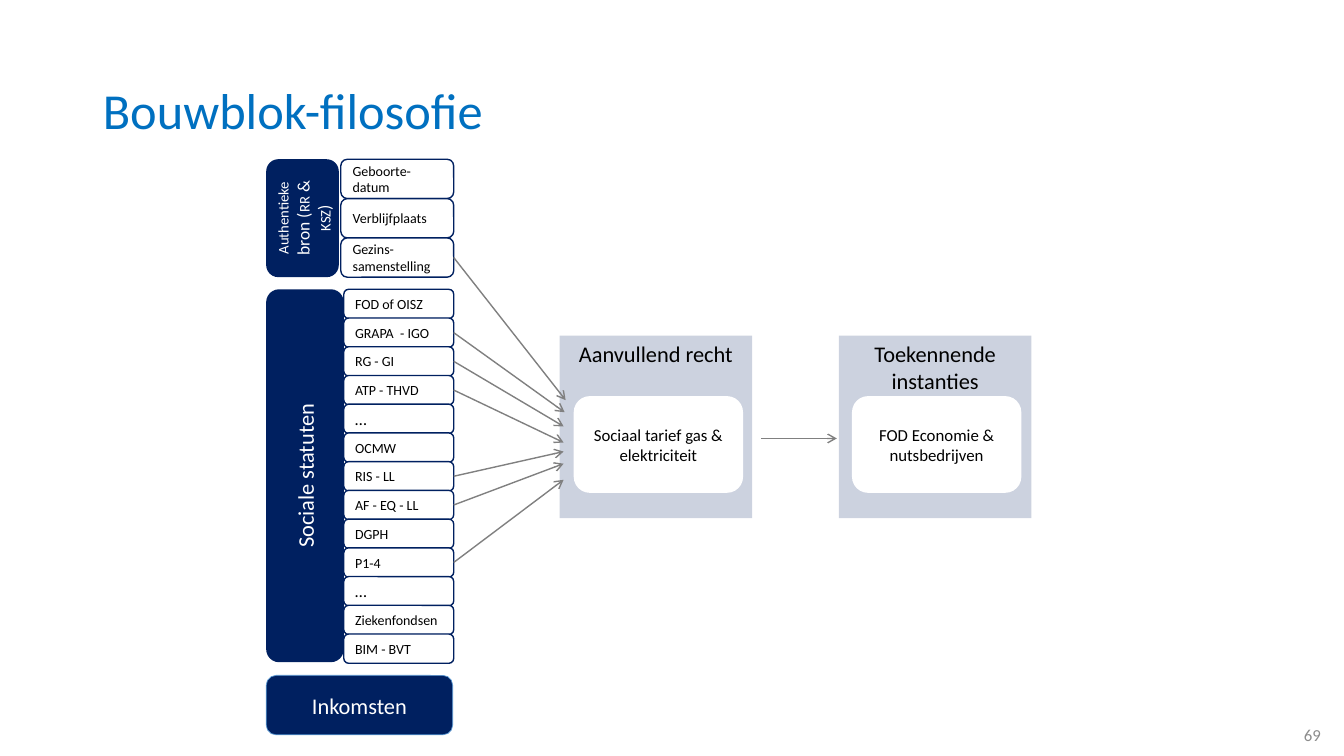
from lxml.etree import SubElement
from pptx import Presentation
from pptx.dml.color import RGBColor
from pptx.enum.shapes import MSO_CONNECTOR, MSO_SHAPE
from pptx.enum.text import MSO_ANCHOR, MSO_AUTO_SIZE, PP_ALIGN
from pptx.oxml.ns import qn
from pptx.util import Inches, Pt

FONT = "Calibri"
NAVY, WHITE, BLACK, GREY = "002060", "FFFFFF", "000000", "808080"
RIGHT_SIDE = 3

SOURCES = ["Geboorte-datum", "Verblijfplaats", "Gezins-samenstelling"]
STATUTES = ["FOD of OISZ", "GRAPA  - IGO", "RG - GI", "ATP - THVD", "…", "OCMW",
            "RIS - LL", "AF - EQ - LL", "DGPH", "P1-4", "…", "Ziekenfondsen",
            "BIM - BVT"]

# Block that feeds the tariff, and where its arrow ends
ARROW_TIPS = {
    "Gezins-samenstelling": (5.61, 3.97),
    "GRAPA  - IGO": (5.6, 4.09),
    "RG - GI": (5.59, 4.23),
    "ATP - THVD": (5.59, 4.39),
    "RIS - LL": (5.59, 4.48),
    "AF - EQ - LL": (5.59, 4.6),
    "P1-4": (5.59, 4.76),
}


def rgb(value):
    return RGBColor.from_string(value)


def apply(target, values):
    for name, value in values.items():
        setattr(target, name, value)


def write(frame, runs, color, align=PP_ALIGN.CENTER, anchor=MSO_ANCHOR.MIDDLE):
    """Fill a frame with one paragraph of (text, size) runs."""
    apply(frame, {"word_wrap": True, "auto_size": MSO_AUTO_SIZE.NONE,
                  "vertical_anchor": anchor})
    paragraph = frame.paragraphs[0]
    paragraph.alignment = align
    for text, size in runs:
        run = paragraph.add_run()
        run.text = text
        apply(run.font, {"name": FONT, "size": Pt(size)})
        run.font.color.rgb = rgb(color)


def add_block(slide, box, runs, fill, color, line=None, line_width=1,
              kind=MSO_SHAPE.ROUNDED_RECTANGLE, vertical=False, **layout):
    block = slide.shapes.add_shape(kind, *map(Inches, box))
    block.shadow.inherit = False
    block.fill.solid()
    block.fill.fore_color.rgb = rgb(fill)
    if line:
        block.line.color.rgb = rgb(line)
        block.line.width = Pt(line_width)
    else:
        block.line.fill.background()
    write(block.text_frame, runs, color, **layout)
    if vertical:
        block.text_frame._txBody.bodyPr.set("vert", "vert270")
    return block


def add_stack(slide, labels, left, top, width, height, pitch):
    """Stack outlined blocks downwards and return them by label."""
    return {
        label: add_block(slide, (left, top + row * pitch, width, height),
                         [(label, 12 if label == "…" else 10)],
                         WHITE, BLACK, line=NAVY, align=PP_ALIGN.LEFT)
        for row, label in enumerate(labels)
    }


def add_panel(slide, left, heading, content_left, content):
    """Pale panel with a heading and a white block inside."""
    panel = add_block(slide, (left, 3.33, 1.91, 1.81), [(heading, 16)],
                      NAVY, BLACK, kind=MSO_SHAPE.RECTANGLE,
                      anchor=MSO_ANCHOR.TOP)
    fill_color = panel.fill._xPr.find(qn("a:solidFill"))[0]
    SubElement(fill_color, qn("a:alpha"), val="20000")
    add_block(slide, (content_left, 3.93, 1.68, 0.96), [(content, 12)],
              WHITE, BLACK)


def add_arrow(slide, start, end, source=None):
    arrow = slide.shapes.add_connector(MSO_CONNECTOR.STRAIGHT,
                                       *map(Inches, start + end))
    if source is not None:
        arrow.begin_connect(source, RIGHT_SIDE)
    arrow.line.color.rgb = rgb(GREY)
    arrow.line.width = Pt(1)
    SubElement(arrow.line._get_or_add_ln(), qn("a:tailEnd"), type="arrow")
    SubElement(arrow._element.spPr, qn("a:effectLst"))


def add_title(slide, text):
    title = slide.shapes.title
    apply(title, {"left": Inches(0.92), "top": Inches(0.4),
                  "width": Inches(11.5), "height": Inches(1.45)})
    write(title.text_frame, [(text, 36)], "0070C0", align=PP_ALIGN.LEFT)
    title.text_frame.paragraphs[0].line_spacing = 0.9


def main():
    presentation = Presentation()
    apply(presentation, {"slide_width": Inches(13.33),
                         "slide_height": Inches(7.5)})
    slide = presentation.slides.add_slide(presentation.slide_layouts[5])

    # Title and page number
    add_title(slide, "Bouwblok-filosofie")
    page_number = slide.shapes.add_textbox(*map(Inches, (10.2, 7.09, 3, 0.4)))
    write(page_number.text_frame, [("69", 12)], "8C8C8C", align=PP_ALIGN.RIGHT)

    # Authentic sources
    add_block(slide, (2.64, 1.58, 0.72, 1.17),
              [("Authentieke", 10.5), (" bron (", 12.5), ("RR", 10.5),
               (" & ", 12.5), ("KSZ", 10.5), (")", 12.5)],
              NAVY, WHITE, vertical=True)
    blocks = add_stack(slide, SOURCES, 3.38, 1.58, 1.12, 0.39, 0.39)

    # Social statutes
    add_block(slide, (2.64, 2.87, 0.77, 3.7), [("Sociale statuten", 16)],
              NAVY, WHITE, vertical=True)
    blocks.update(add_stack(slide, STATUTES, 3.41, 2.87, 1.09, 0.29,
                            3.42 / (len(STATUTES) - 1)))

    # Income
    add_block(slide, (2.64, 6.7, 1.85, 0.59), [("Inkomsten", 16)],
              NAVY, WHITE, line="5B9BD5", line_width=0.5)

    # Right and granting bodies
    add_panel(slide, 5.55, "Aanvullend recht",
              5.69, "Sociaal tarief gas & elektriciteit")
    add_panel(slide, 8.32, "Toekennende instanties",
              8.45, "FOD Economie & nutsbedrijven")

    # Arrows
    for label, tip in ARROW_TIPS.items():
        add_arrow(slide, (4.5, tip[1]), tip, source=blocks[label])
    add_arrow(slide, (7.55, 4.35), (8.3, 4.35))

    presentation.save("out.pptx")


if __name__ == "__main__":
    main()
